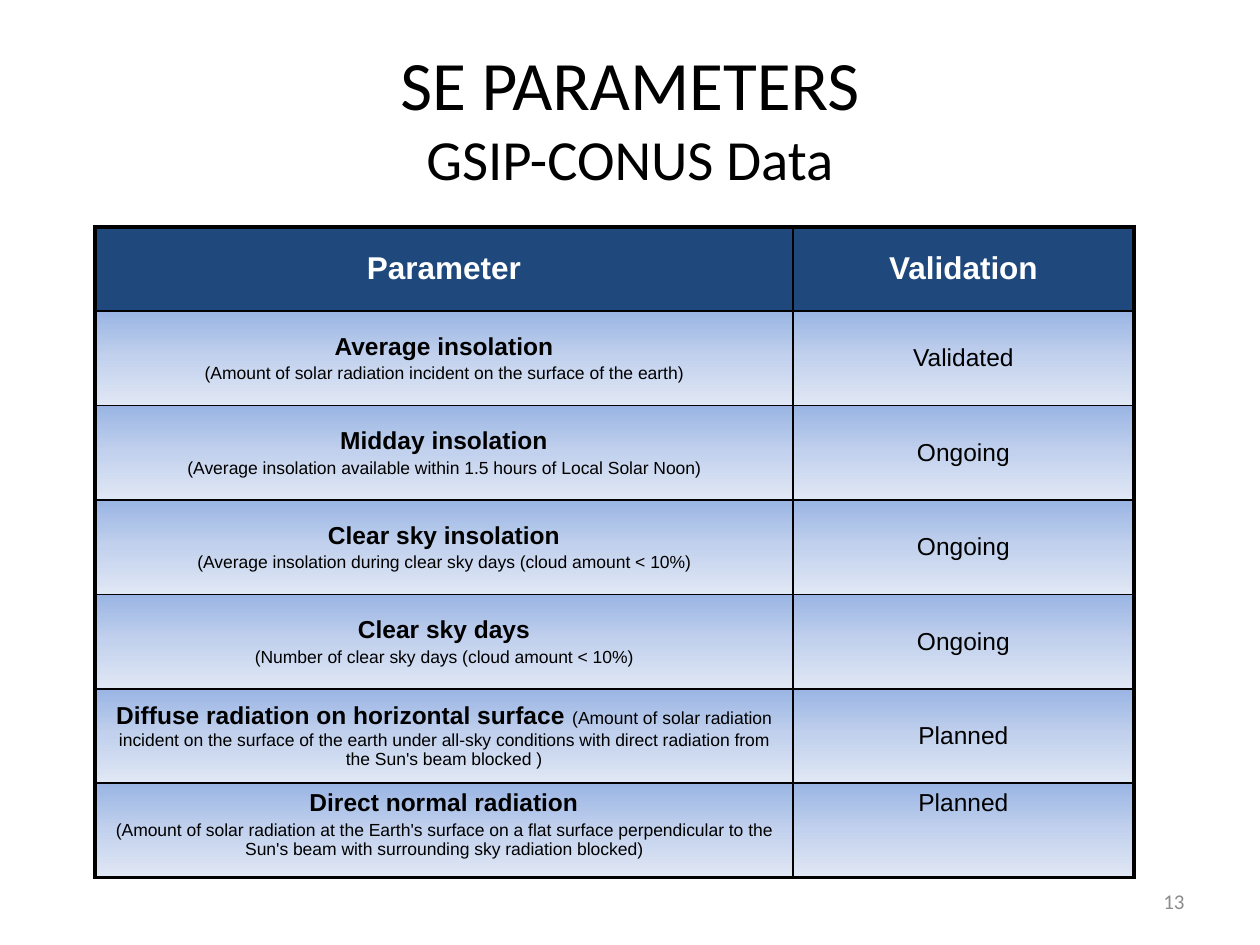
"""Build the slide that lists the SE parameters and their validation state."""
from pptx import Presentation
from pptx.dml.color import RGBColor as Rgb
from pptx.enum.text import MSO_ANCHOR as Anchor, MSO_AUTO_SIZE as AutoSize, PP_ALIGN as Align
from pptx.oxml import parse_xml
from pptx.oxml.ns import nsdecls
from pptx.util import Pt

PX = 914400 // 126
COLORS = {
    "ink": "000000", "paper": "FFFFFF", "header": "1F497D", "page": "8C8C8C",
    "top": "9AB5E4", "middle": "C2D1ED", "bottom": "E1E8F5",
}
HEADINGS = ("Parameter", "Validation")
PARAMETERS = [
    ("Average insolation", "\n",
     "(Amount of solar radiation incident on the surface of the earth)", "Validated"),
    ("Midday insolation", "\n",
     "(Average insolation available within 1.5 hours of Local Solar Noon)", "Ongoing"),
    ("Clear sky insolation", "\n",
     "(Average insolation during clear sky days (cloud amount < 10%)", "Ongoing"),
    ("Clear sky days", "\n", "(Number of clear sky days (cloud amount < 10%)", "Ongoing"),
    ("Diffuse radiation on horizontal surface", " ",
     "(Amount of solar radiation incident on the surface of the earth under all-sky "
     "conditions with direct radiation from the Sun's beam blocked )", "Planned"),
    ("Direct normal radiation", "\n",
     "(Amount of solar radiation at the Earth's surface on a flat surface perpendicular "
     "to the Sun's beam with surrounding sky radiation blocked)", "Planned"),
]


class SlideBuilder:
    """Hold the style and the current slide."""

    def __init__(self, slide, heading_font="Calibri", table_font="Arial"):
        self.slide = slide
        self.heading_font = heading_font
        self.table_font = table_font

    def style(self, run, font, size, color="ink", bold=False):
        run.font.name = font
        run.font.size = Pt(size)
        run.font.bold = bold
        run.font.color.rgb = Rgb.from_string(COLORS[color])

    def place(self, shape, left, top, width, height):
        shape.left, shape.top = left * PX, top * PX
        shape.width, shape.height = width * PX, height * PX

    def title(self, main, subtitle, box):
        heading = self.slide.shapes.title
        self.place(heading, *box)
        frame = heading.text_frame
        frame.auto_size = AutoSize.NONE
        frame.vertical_anchor = Anchor.MIDDLE
        line = frame.paragraphs[0]
        line.text = f"{main}\v{subtitle}"
        line.alignment = Align.CENTER
        for run, size in zip(line.runs, (39.6, 32.4)):
            self.style(run, self.heading_font, size)

    def page_number(self, number, box):
        label = self.slide.shapes.add_textbox(*(side * PX for side in box))
        frame = label.text_frame
        frame.word_wrap = True
        frame.vertical_anchor = Anchor.MIDDLE
        line = frame.paragraphs[0]
        line.text = number
        line.alignment = Align.RIGHT
        self.style(line.runs[0], self.heading_font, 12, "page")

    def borders(self, cell, widths):
        for side, width in widths.items():
            cell._tc.get_or_add_tcPr().append(parse_xml(
                f'<a:ln{side} {nsdecls("a")} w="{Pt(width)}"><a:solidFill>'
                f'<a:srgbClr val="{COLORS["ink"]}"/></a:solidFill></a:ln{side}>'))

    def gradient(self, cell):
        stops = "".join(
            f'<a:gs pos="{position}"><a:srgbClr val="{COLORS[name]}"/></a:gs>'
            for position, name in ((0, "top"), (50000, "middle"), (100000, "bottom")))
        cell._tc.get_or_add_tcPr().append(parse_xml(
            f'<a:gradFill {nsdecls("a")}><a:gsLst>{stops}</a:gsLst>'
            '<a:lin ang="5400000" scaled="0"/></a:gradFill>'))

    def cell_text(self, cell, pieces, color="ink", anchor=Anchor.MIDDLE):
        cell.vertical_anchor = anchor
        line = cell.text_frame.paragraphs[0]
        for text, size, bold in pieces:
            if text == "\n":
                line = cell.text_frame.add_paragraph()
                continue
            run = line.add_run()
            run.text = text
            self.style(run, self.table_font, size, color, bold)
            line.alignment = Align.CENTER
            if line.space_before is None:
                line.space_before = Pt(0.2 * size)

    def table(self, headings, parameters, box, name_width, header_height):
        left, top, width, height = box
        last = len(parameters)
        grid = self.slide.shapes.add_table(
            last + 1, len(headings), *(side * PX for side in box)).table
        grid.horz_banding = False
        grid.columns[0].width = name_width * PX
        grid.columns[1].width = (width - name_width) * PX
        grid.rows[0].height = header_height * PX
        for index in range(1, last + 1):
            grid.rows[index].height = (height - header_height) * PX // last

        for row in range(last + 1):
            for column in range(2):
                cell = grid.cell(row, column)
                outer = {"L": column == 0, "R": column == 1, "T": row == 0, "B": row == last}
                self.borders(cell, {side: 2.25 if edge else 1 for side, edge in outer.items()})
                if row:
                    self.gradient(cell)
                else:
                    cell.fill.solid()
                    cell.fill.fore_color.rgb = Rgb.from_string(COLORS["header"])
                    self.cell_text(cell, [(headings[column], 18, True)], "paper")

        for row, (name, gap, meaning, status) in enumerate(parameters, 1):
            anchor = Anchor.TOP if row == last else Anchor.MIDDLE
            label = [(name, 14, True), (gap, 14, True), (meaning, 10, False)]
            self.cell_text(grid.cell(row, 0), label, anchor=anchor)
            self.cell_text(grid.cell(row, 1), [(status, 14, False)], anchor=anchor)


def main():
    deck = Presentation()
    deck.slide_width, deck.slide_height = 1260 * PX, 945 * PX
    builder = SlideBuilder(deck.slides.add_slide(deck.slide_layouts[5]))
    builder.title("SE PARAMETERS", "GSIP-CONUS Data", (63, 38, 1134, 157))
    builder.table(HEADINGS, PARAMETERS, (95, 227, 1039, 651), 698, 84)
    builder.page_number("13", (903, 876, 294, 50))
    deck.save("out.pptx")


if __name__ == "__main__":
    main()
